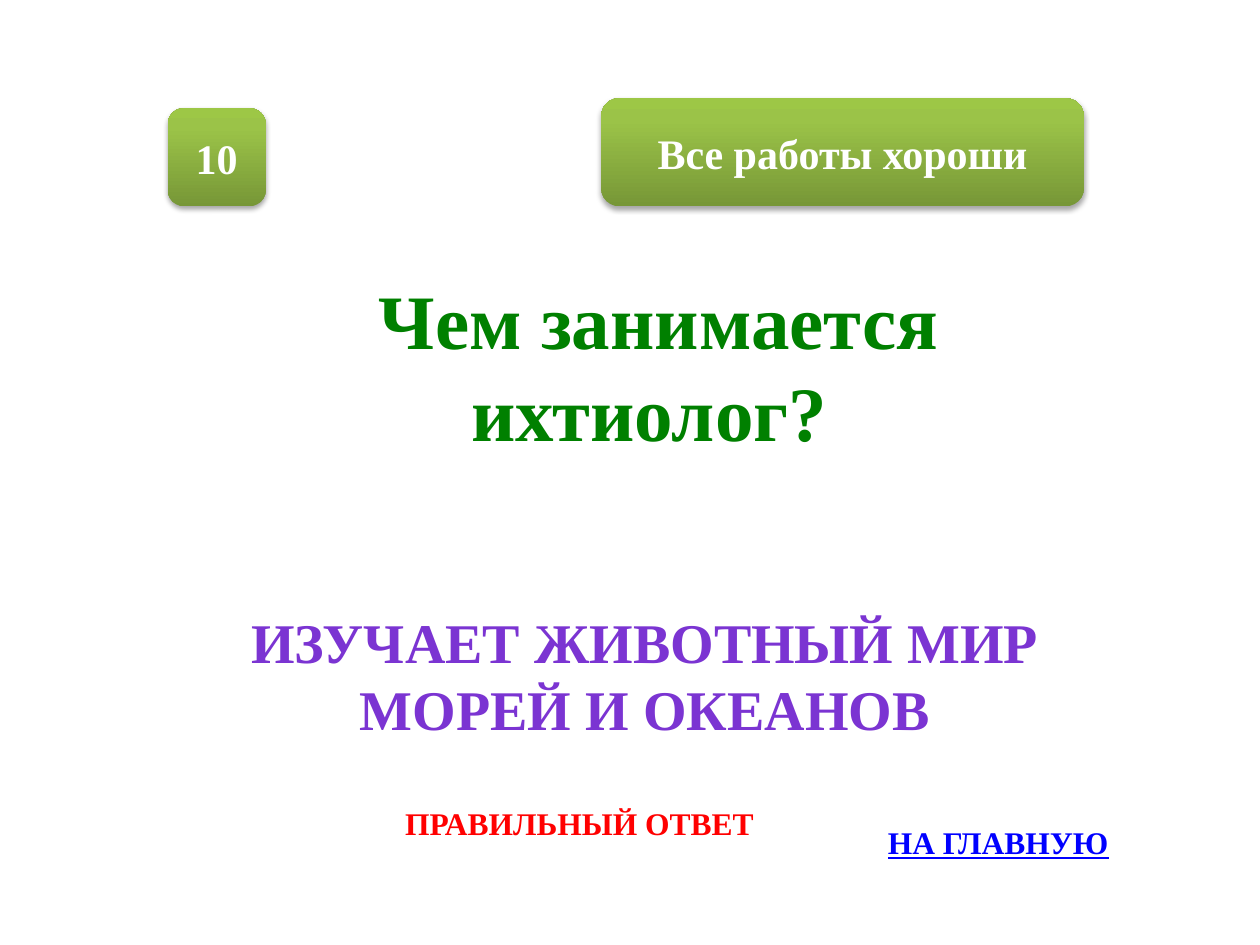
from lxml import etree
from pptx import Presentation
from pptx.dml.color import RGBColor
from pptx.enum.shapes import MSO_SHAPE
from pptx.enum.text import MSO_ANCHOR, MSO_AUTO_SIZE, PP_ALIGN
from pptx.oxml import parse_xml
from pptx.oxml.ns import nsdecls, qn
from pptx.util import Cm, Pt

COLORS = {
    "white": "FFFFFF", "question": "008000", "answer": "7B34D2",
    "hint": "FF0000", "home": "0000FF", "shadow": "000000",
}
GREEN_STOPS = [(0, "779737"), (80, "9BC348"), (100, "9DC746")]
FONT = "Times New Roman"

# Boxes are left, top, width, height in cm
QUESTION = ("Чем занимается ихтиолог? ", (6.15, 5.36, 14.27, 4.01))
BADGES = [
    ("Все работы хороши", (12.12, 1.98, 9.73, 2.18)),
    ("10", (3.38, 2.18, 1.98, 1.98)),
]
# text, box, size, color, alignment, underline
LABELS = [
    ("НА ГЛАВНУЮ", (17.65, 16.46, 6.35, 1.02), 18, "home", PP_ALIGN.LEFT, True),
    ("ПРАВИЛЬНЫЙ ОТВЕТ", (7.92, 16.08, 8.74, 1.02), 18, "hint", PP_ALIGN.LEFT, False),
    ("ИЗУЧАЕТ ЖИВОТНЫЙ МИР МОРЕЙ И ОКЕАНОВ", (4.57, 12.12, 16.87, 3),
     32, "answer", PP_ALIGN.CENTER, False),
]


def write(sp, text, size, color, align=PP_ALIGN.CENTER, underline=False, anchor=MSO_ANCHOR.TOP):
    tf = sp.text_frame
    tf.text = text
    tf.word_wrap = True
    tf.auto_size = MSO_AUTO_SIZE.NONE
    tf.vertical_anchor = anchor
    p = tf.paragraphs[0]
    p.alignment = align
    font = p.font
    font.name, font.size, font.bold = FONT, Pt(size), True
    font.underline = underline
    font.color.rgb = RGBColor.from_string(COLORS[color])


def style_badge(sp):
    """Give a shape the green gradient, no outline and a soft shadow below."""
    sp.line.fill.background()
    sp.shadow.inherit = False
    stops = "".join(f'<a:gs pos="{pos * 1000}"><a:srgbClr val="{color}"/></a:gs>'
                    for pos, color in GREEN_STOPS)
    gradient = parse_xml(f'<a:gradFill {nsdecls("a")} rotWithShape="1"><a:gsLst>{stops}</a:gsLst>'
                         '<a:lin ang="16200000" scaled="0"/></a:gradFill>')
    sp_pr = sp._element.spPr
    sp_pr.find(qn("a:prstGeom")).addnext(gradient)
    shadow = etree.SubElement(sp_pr.find(qn("a:effectLst")), qn("a:outerShdw"),
                              blurRad=str(Pt(3.1)), dist=str(Pt(1.8)),
                              dir="5400000", rotWithShape="0")
    color = etree.SubElement(shadow, qn("a:srgbClr"), val=COLORS["shadow"])
    etree.SubElement(color, qn("a:alpha"), val="35000")


prs = Presentation()
prs.slide_width, prs.slide_height = Cm(25.4), Cm(19.05)
s = prs.slides.add_slide(prs.slide_layouts[5])

text, box = QUESTION
title = s.shapes.title
title.left, title.top, title.width, title.height = map(Cm, box)
write(title, text, 44, "question")

for text, box in BADGES:
    sp = s.shapes.add_shape(MSO_SHAPE.ROUNDED_RECTANGLE, *map(Cm, box))
    style_badge(sp)
    write(sp, text, 24, "white", anchor=MSO_ANCHOR.MIDDLE)

for text, box, size, color, align, underline in LABELS:
    sp = s.shapes.add_textbox(*map(Cm, box))
    write(sp, text, size, color, align, underline)

prs.save("out.pptx")
